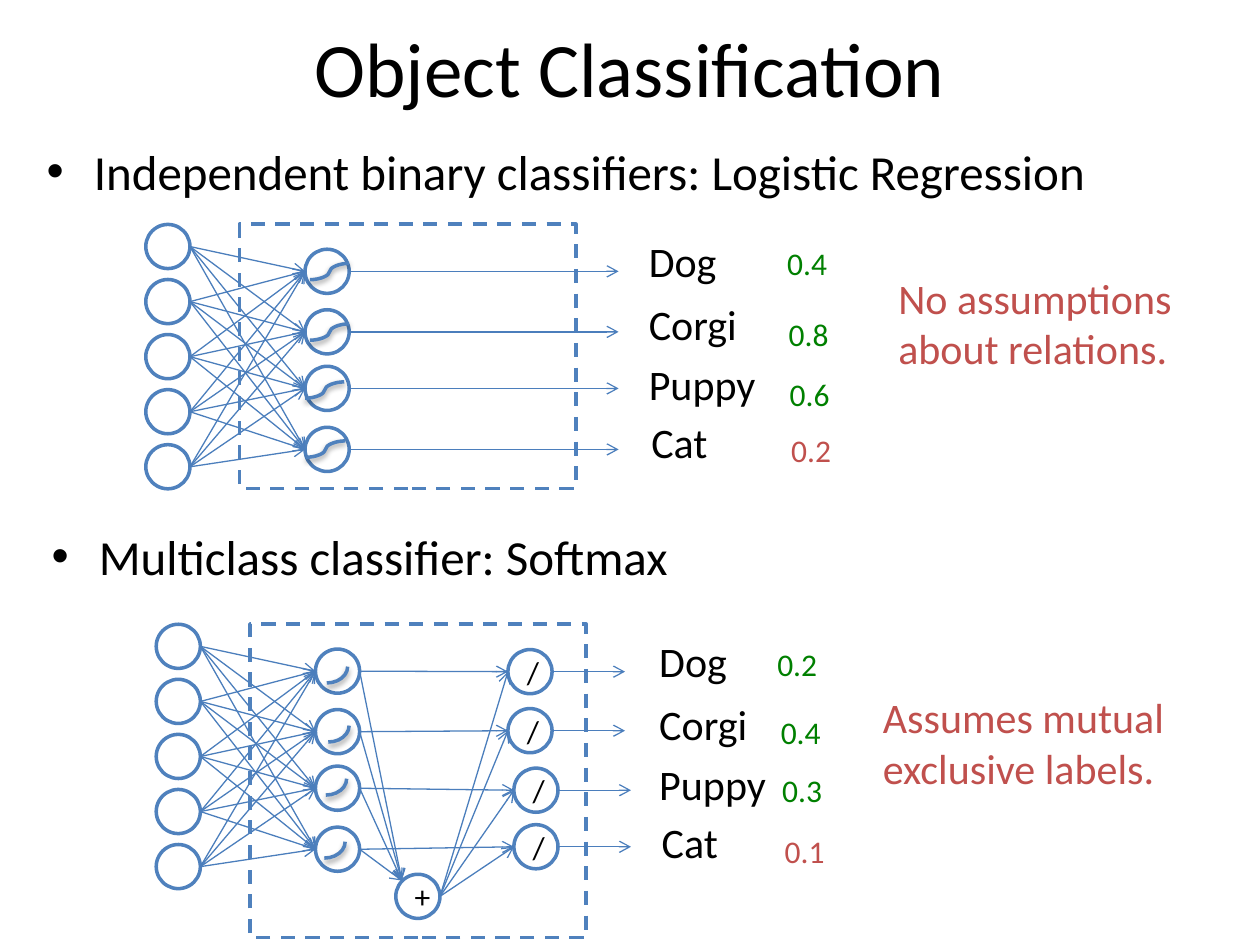
from dataclasses import dataclass
from lxml.etree import SubElement
from pptx import Presentation
from pptx.dml.color import RGBColor
from pptx.enum.dml import MSO_LINE
from pptx.enum.shapes import MSO_CONNECTOR, MSO_SHAPE
from pptx.enum.text import MSO_ANCHOR, MSO_AUTO_SIZE, PP_ALIGN
from pptx.oxml.ns import qn
from pptx.util import Cm, Pt

COLORS = {"ink": "000000", "paper": "FFFFFF", "edge": "4F81BD",
          "arrow": "4B7EBC", "good": "008000", "bad": "C0504D"}
SIZE = 0.89                                  # node diameter, cm
INPUTS = [4.97 + 1.11 * i for i in range(5)]  # node centres
HIDDEN = [5.47, 6.69, 7.83, 9.06]
IN_X, HID_X = 2.94, 6.15
LABELS = [("Dog", 12.83, 4.62), ("Corgi", 12.83, 5.89),
          ("Puppy", 12.83, 7.11), ("Cat", 12.88, 8.28)]


@dataclass
class Node:
    x: float   # left edge
    y: float   # centre
    text: str = ""

    @property
    def left(self) -> tuple[float, float]:
        return self.x, self.y

    @property
    def right(self) -> tuple[float, float]:
        return self.x + SIZE, self.y


@dataclass
class Score:
    text: str
    x: float
    y: float
    color: str = "good"


@dataclass
class Net:
    head: str
    head_at: tuple[float, float]
    dx: float
    dy: float
    height: float
    note: str
    note_at: tuple[float, float]
    scores: list[Score]


NETS = [
    Net("Independent binary classifiers: Logistic Regression", (0.69, 2.72),
        0, 0, 5.33, "No assumptions about relations.", (17.86, 5.36),
        [Score("0.4", 15.62, 4.8), Score("0.8", 15.65, 6.22),
         Score("0.6", 15.67, 7.44), Score("0.2", 15.7, 8.56, "bad")]),
    Net("Multiclass classifier: Softmax", (0.79, 10.49),
        0.21, 8.06, 6.32, "Assumes mutual exclusive labels.", (17.55, 13.82),
        [Score("0.2", 15.42, 12.88), Score("0.4", 15.49, 14.25),
         Score("0.3", 15.52, 15.42), Score("0.1", 15.57, 16.64, "bad")]),
]

deck = Presentation()
deck.slide_width, deck.slide_height = Cm(25.4), Cm(19.05)
slide = deck.slides.add_slide(deck.slide_layouts[5])
shapes = slide.shapes


def tint(name: str) -> RGBColor:
    return RGBColor.from_string(COLORS[name])


def write(frame, text: str, *, size: int = 18, color: str = "ink",
          align=PP_ALIGN.LEFT, anchor=MSO_ANCHOR.TOP, bullet: bool = False):
    frame.word_wrap = True
    frame.vertical_anchor = anchor
    para = frame.paragraphs[0]
    para.alignment = align
    run = para.add_run()
    run.text = text
    run.font.name, run.font.size = "Calibri", Pt(size)
    run.font.color.rgb = tint(color)
    if bullet:
        props = run.font._element.getparent().getparent().get_or_add_pPr()
        props.set("marL", "342900")
        props.set("indent", "-342900")
        gap = SubElement(props, qn("a:spcBef"))
        SubElement(gap, qn("a:spcPct"), val="20000")
        SubElement(props, qn("a:buFont"), typeface="Arial")
        SubElement(props, qn("a:buChar"), char="•")


def label(text: str, x: float, y: float, w: float, h: float,
          grow: bool = True, **style) -> None:
    frame = shapes.add_textbox(Cm(x), Cm(y), Cm(w), Cm(h)).text_frame
    write(frame, text, **style)
    if grow:
        frame.auto_size = MSO_AUTO_SIZE.SHAPE_TO_FIT_TEXT


def outline(kind, x: float, y: float, w: float, h: float):
    shape = shapes.add_shape(kind, Cm(x), Cm(y), Cm(w), Cm(h))
    shape.shadow.inherit = False
    shape.fill.background()
    shape.line.color.rgb, shape.line.width = tint("edge"), Pt(2)
    return shape


def draw(node: Node) -> None:
    shape = outline(MSO_SHAPE.OVAL, node.x, node.y - SIZE / 2, SIZE, SIZE)
    shape.fill.solid()
    shape.fill.fore_color.rgb = tint("paper")
    if node.text:
        write(shape.text_frame, node.text, align=PP_ALIGN.CENTER,
              anchor=MSO_ANCHOR.MIDDLE)


def link(start: tuple[float, float], end: tuple[float, float],
         kind=MSO_CONNECTOR.STRAIGHT, color: str = "arrow",
         width: float = 0.75):
    line = shapes.add_connector(kind, *map(Cm, start + end))
    line.line.color.rgb, line.line.width = tint(color), Pt(width)
    SubElement(line.element.spPr, qn("a:effectLst"))
    if kind == MSO_CONNECTOR.STRAIGHT:
        SubElement(line.line._get_or_add_ln(), qn("a:tailEnd"), type="arrow")
    return line


def shade(shape) -> None:
    effects = shape.element.spPr.find(qn("a:effectLst"))
    outer = SubElement(effects, qn("a:outerShdw"), blurRad="40000",
                       dist="20000", dir="5400000", rotWithShape="0")
    black = SubElement(outer, qn("a:srgbClr"), val=COLORS["ink"])
    SubElement(black, qn("a:alpha"), val="38000")


def build(net: Net) -> list[Node]:
    """Draw the parts both nets share and return the hidden nodes."""
    label(net.head, *net.head_at, 22.86, 2.41, grow=False, size=28,
          bullet=True)
    for text, x, y in LABELS:
        label(text, x + net.dx, y + net.dy, 3.86, 1.27, size=24)
    first = [Node(IN_X + net.dx, y + net.dy) for y in INPUTS]
    hidden = [Node(HID_X + net.dx, y + net.dy) for y in HIDDEN]
    for node in first + hidden:
        draw(node)
    for goal in hidden:
        for node in first:
            link(node.right, goal.left)
    frame = outline(MSO_SHAPE.RECTANGLE, 4.83 + net.dx, 4.52 + net.dy,
                    6.78, net.height)
    frame.line.dash_style = MSO_LINE.DASH
    for score in net.scores:
        label(score.text, score.x, score.y, 1.65, 1.02, color=score.color)
    label(net.note, *net.note_at, 6.71, 2.31, size=24, color="bad")
    return hidden


# Title
title = shapes.title
title.left, title.top = Cm(1.27), Cm(-0.25)
title.width, title.height = Cm(22.86), Cm(3.18)
write(title.text_frame, "Object Classification", size=44,
      align=PP_ALIGN.CENTER, anchor=MSO_ANCHOR.MIDDLE)

# Logistic regression: a sigmoid in each hidden node
CURVES = [(6.25, 5.64), (6.25, 6.86), (6.15, 8.03), (6.17, 9.22)]
for node, (x, y) in zip(build(NETS[0]), CURVES):
    link(node.right, (12.47, node.y))
    shade(link((x, y), (x + 0.79, y - 0.33), MSO_CONNECTOR.CURVE, "edge", 2))

# Softmax: exponents, their sum, then a division per class
ARCS = [(6.17, 13.11), (6.2, 14.3), (6.15, 15.37), (6.12, 16.64)]
ratios = [Node(10.24, 13.54, "/"), Node(10.24, 14.73, "/"),
          Node(10.36, 15.93, "/"), Node(10.36, 17.07, "/")]
total = Node(7.98, 18.07, "+")
hidden = build(NETS[1])
for node in ratios + [total]:
    draw(node)
for node, ratio, (x, y) in zip(hidden, ratios, ARCS):
    link(node.right, ratio.left)
    link(node.right, (8.1, 17.75))
    link(total.right, ratio.left)
    link(ratio.right, (ratio.x + 2.36, ratio.y))
    arc = outline(MSO_SHAPE.ARC, x, y, 0.84, 0.66)
    arc.element.spPr.find(qn("a:xfrm")).set("flipV", "1")
    shade(arc)

deck.save("out.pptx")
